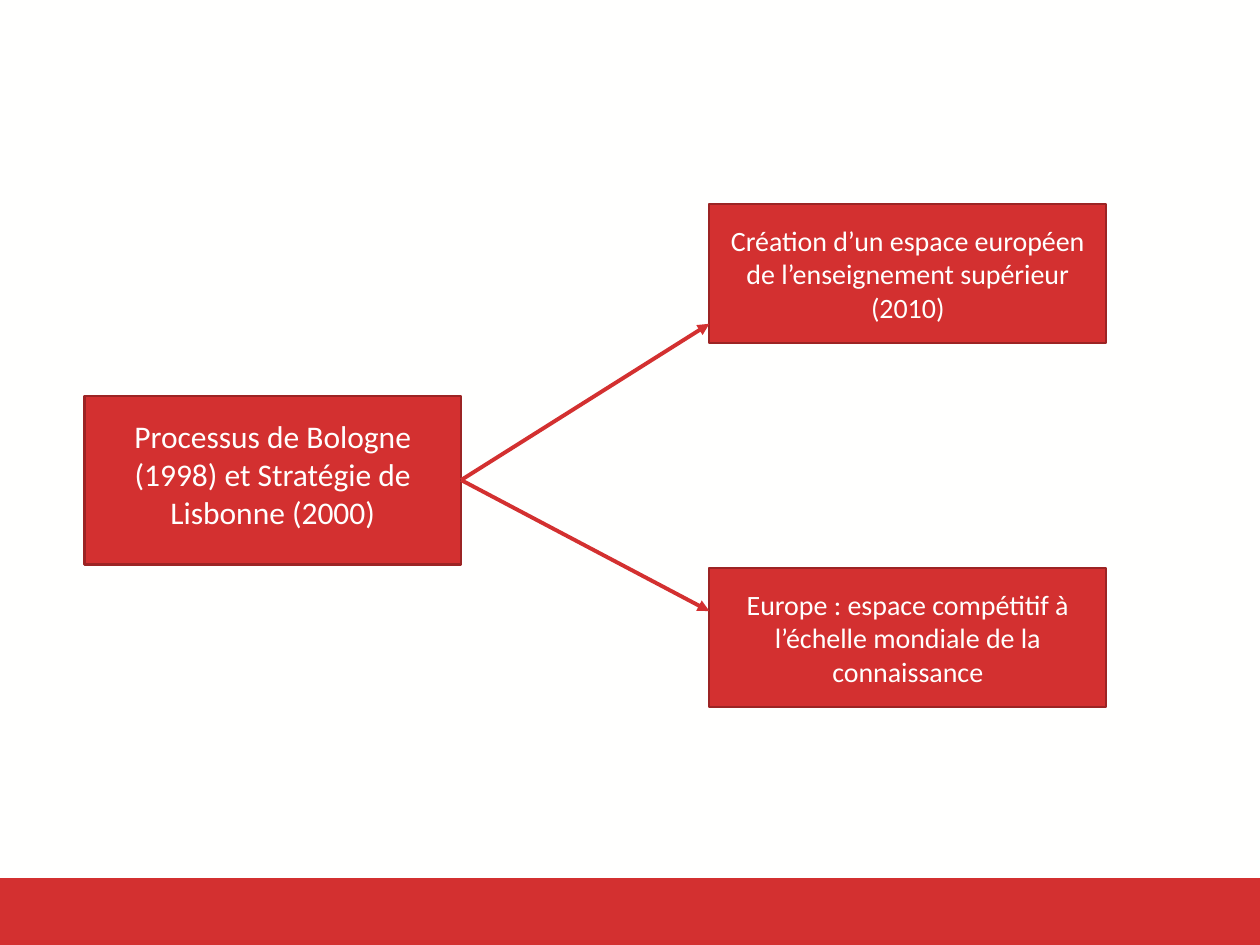
"""Build the slide on the Bologna process and the Lisbon strategy."""
from dataclasses import dataclass

from pptx import Presentation
from pptx.dml.color import RGBColor
from pptx.enum import shapes, text
from pptx.oxml import ns, xmlchemy
from pptx.util import Inches, Pt

RED = "D33030"
DARK_RED = "9C2424"
OFF_WHITE = "FFFFFE"


@dataclass(frozen=True)
class Box:
    label: str
    left: float
    top: float
    width: float
    height: float
    size: int = 16
    bottom_inset: float = 0.05


def color(value: str) -> RGBColor:
    return RGBColor.from_string(value)


def add_rectangle(slide, left: float, top: float, width: float, height: float):
    shape = slide.shapes.add_shape(
        shapes.MSO_SHAPE.RECTANGLE,
        Inches(left), Inches(top), Inches(width), Inches(height),
    )
    shape.shadow.inherit = False
    shape.fill.solid()
    shape.fill.fore_color.rgb = color(RED)
    shape.line.fill.background()
    return shape


def add_box(slide, box: Box) -> None:
    shape = add_rectangle(slide, box.left, box.top, box.width, box.height)
    shape.line.color.rgb = color(DARK_RED)
    shape.line.width = Pt(1.25)
    frame = shape.text_frame
    frame.word_wrap = True
    frame.vertical_anchor = text.MSO_ANCHOR.MIDDLE
    frame.margin_bottom = Inches(box.bottom_inset)
    paragraph = frame.paragraphs[0]
    paragraph.text = box.label
    paragraph.alignment = text.PP_ALIGN.CENTER
    paragraph.font.name = "Calibri"
    paragraph.font.size = Pt(box.size)
    paragraph.font.color.rgb = color(OFF_WHITE)


def add_arrow(slide, source: Box, target: Box, target_y: float) -> None:
    connector = slide.shapes.add_connector(
        shapes.MSO_CONNECTOR.STRAIGHT,
        Inches(source.left + source.width), Inches(source.top + source.height / 2),
        Inches(target.left), Inches(target_y),
    )
    connector.line.color.rgb = color(RED)
    connector.line.width = Pt(2.25)
    arrowhead = xmlchemy.OxmlElement("a:tailEnd")
    arrowhead.set("type", "triangle")
    properties = connector.element.find(ns.qn("p:spPr"))
    properties.find(ns.qn("a:ln")).append(arrowhead)
    properties.append(xmlchemy.OxmlElement("a:effectLst"))


def main() -> None:
    presentation = Presentation()
    presentation.slide_width = Inches(10)
    presentation.slide_height = Inches(7.5)
    slide = presentation.slides.add_slide(presentation.slide_layouts[6])
    slide.background.fill.solid()
    slide.background.fill.fore_color.rgb = color(OFF_WHITE)

    add_rectangle(slide, -0.12, 6.97, 10.24, 0.56)

    process = Box("Processus de Bologne (1998) et Stratégie de Lisbonne (2000)",
                  0.67, 3.14, 2.99, 1.34, size=18, bottom_inset=0.15)
    education = Box("Création d’un espace européen de l’enseignement supérieur (2010)",
                    5.63, 1.62, 3.15, 1.1)
    knowledge = Box("Europe : espace compétitif à l’échelle mondiale de la connaissance",
                    5.63, 4.51, 3.15, 1.1)
    for box in (process, education, knowledge):
        add_box(slide, box)
    add_arrow(slide, process, education, 2.57)
    add_arrow(slide, process, knowledge, 4.85)

    presentation.save("out.pptx")


if __name__ == "__main__":
    main()
